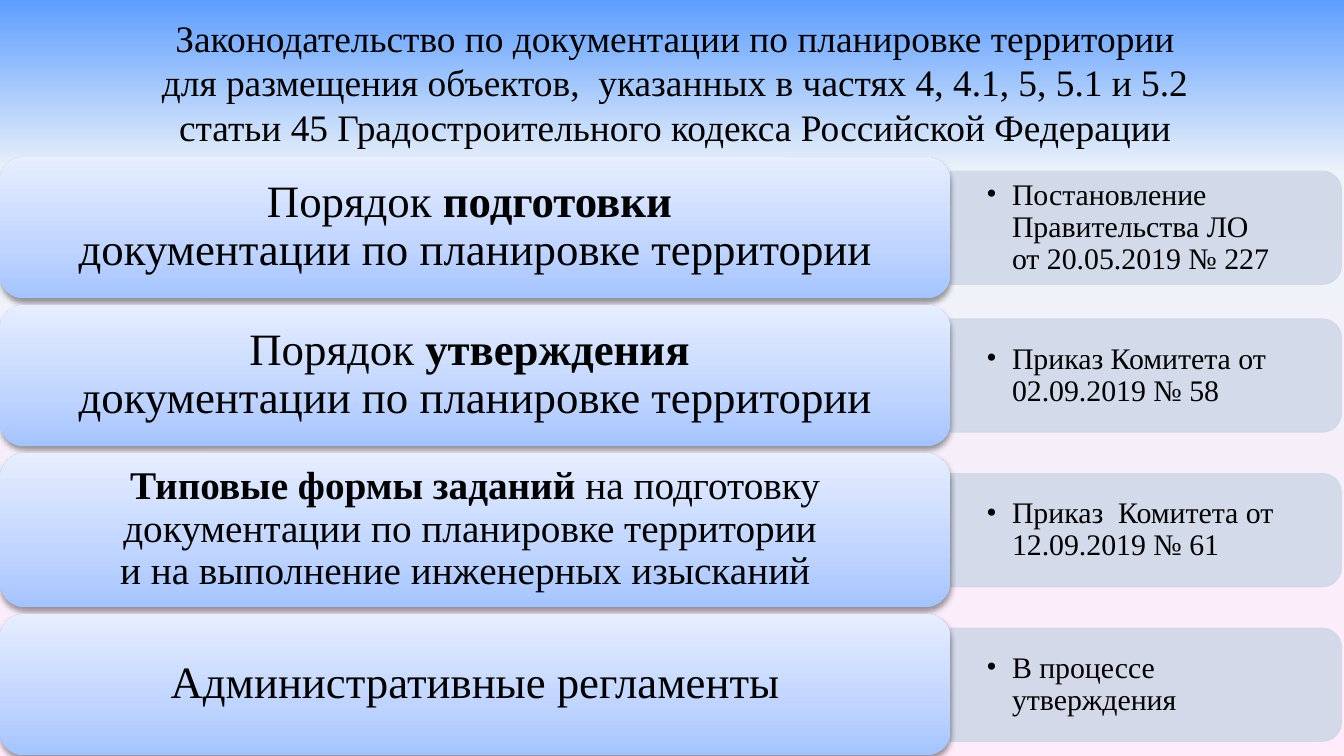
import pptx
import pptx.dml.color
import pptx.enum.shapes
import pptx.enum.text
import pptx.oxml
import pptx.oxml.ns
import pptx.util
from pptx.util import Inches

FONT = "Times New Roman"
SHAPES = pptx.enum.shapes.MSO_SHAPE
ALIGN = pptx.enum.text.PP_ALIGN
ANCHOR = pptx.enum.text.MSO_ANCHOR
NS = pptx.oxml.ns.nsdecls("a")

TITLE = (
    "Законодательство по документации по планировке территории \n"
    "для размещения объектов,  указанных в частях 4, 4.1, 5, 5.1 и 5.2 \n"
    "статьи 45 Градостроительного кодекса Российской Федерации "
)
PLANNING = "документации по планировке территории"
ROWS = [
    (1.05, 24, [("Порядок ", False), ("подготовки \n", True), (PLANNING, False)],
     "Постановление Правительства ЛО\nот 20.05.2019 № 227"),
    (1.05, 24, [("Порядок", False), (" утверждения \n", True), (PLANNING, False)],
     "Приказ Комитета от 02.09.2019 № 58"),
    (1.15, 21, [("Типовые формы заданий ", True),
                (f"на подготовку {PLANNING} \nи на выполнение инженерных изысканий  ", False)],
     "Приказ  Комитета от 12.09.2019 № 61"),
    (1.05, 24, [("Административные регламенты", False)],
     "В процессе утверждения"),
]
ROWS_TOP, ROW_GAP = 1.17, 0.05
TOPIC_WIDTH, ACT_WIDTH, ACT_HEIGHT = 7.07, 2.91, 0.84


def color(value):
    return pptx.dml.color.RGBColor.from_string(value)


def set_alpha(element, percent):
    for rgb in element.iter(pptx.oxml.ns.qn("a:srgbClr")):
        rgb.append(pptx.oxml.parse_xml(f'<a:alpha {NS} val="{percent * 1000}"/>'))


def set_gradient(fill, owner, stops, angle):
    fill.gradient()
    gradient = owner.find(".//" + pptx.oxml.ns.qn("a:gradFill"))
    marks = "".join(
        f'<a:gs pos="{position * 1000}"><a:srgbClr val="{value}">'
        f'<a:alpha val="{alpha * 1000}"/></a:srgbClr></a:gs>'
        for position, value, alpha in stops)
    xml = (f'<a:gradFill {NS} rotWithShape="1"><a:gsLst>{marks}</a:gsLst>'
           f'<a:lin ang="{angle * 60000}" scaled="0"/></a:gradFill>')
    gradient.getparent().replace(gradient, pptx.oxml.parse_xml(xml))


def write_text(frame, spans, size=20, align=ALIGN.CENTER, anchor=ANCHOR.MIDDLE,
               spacing=0.9, wrap=True, margins=(0.1, 0.05), bullet=False):
    frame.word_wrap = wrap
    frame.vertical_anchor = anchor
    frame.margin_left = frame.margin_right = Inches(margins[0])
    frame.margin_top = frame.margin_bottom = Inches(margins[1])
    paragraph = frame.paragraphs[0]
    paragraph.alignment = align
    paragraph.line_spacing = spacing
    for text, bold in spans:
        for index, line in enumerate(text.split("\n")):
            if index:
                paragraph.add_line_break()
            if line:
                run = paragraph.add_run()
                run.text = line
                run.font.name = FONT
                run.font.size = pptx.util.Pt(size)
                run.font.bold = bold
                run.font.color.rgb = color("000000")
    if bullet:
        paragraph.level = 1
        properties = paragraph._p.get_or_add_pPr()
        properties.set("marL", str(Inches(0.19)))
        properties.set("indent", str(-Inches(0.19)))
        properties.append(pptx.oxml.parse_xml(f'<a:buFont {NS} typeface="{FONT}"/>'))
        properties.append(pptx.oxml.parse_xml(f'<a:buChar {NS} char="•"/>'))


def add_title(slide, left, top, width, height):
    title = slide.shapes.add_textbox(Inches(left), Inches(top), Inches(width), Inches(height))
    write_text(title.text_frame, [(TITLE, False)], anchor=ANCHOR.TOP, spacing=1.0, wrap=False)


def add_act(slide, left, top, width, height, text):
    plate = slide.shapes.add_shape(
        SHAPES.ROUND_2_SAME_RECTANGLE,
        Inches(left + (width - height) / 2), Inches(top + (height - width) / 2),
        Inches(height), Inches(width))
    plate.rotation = 90
    plate.shadow.inherit = False
    plate.fill.solid()
    plate.fill.fore_color.rgb = color("D0D8E8")
    plate.line.color.rgb = color("D0D8E8")
    plate.line.width = pptx.util.Pt(0.75)
    set_alpha(plate._element.spPr, 90)
    act = slide.shapes.add_textbox(
        Inches(left), Inches(top + 0.04), Inches(width - 0.04), Inches(height - 0.08))
    write_text(act.text_frame, [(text, False)], size=16, align=ALIGN.LEFT,
               margins=(0.27, 0.14), bullet=True)


def add_topic(slide, left, top, width, height, spans, size):
    plate = slide.shapes.add_shape(
        SHAPES.ROUNDED_RECTANGLE, Inches(left), Inches(top), Inches(width), Inches(height))
    set_gradient(plate.fill, plate._element.spPr,
                 [(0, "A4C4FF", 100), (35, "BFD4FF", 100), (100, "E6EEFF", 100)], 270)
    plate.line.fill.background()
    plate.shadow.inherit = False
    effects = plate._element.spPr.find(pptx.oxml.ns.qn("a:effectLst"))
    effects.append(pptx.oxml.parse_xml(
        f'<a:outerShdw {NS} blurRad="{pptx.util.Pt(3.1)}" dist="{pptx.util.Pt(1.6)}" '
        'dir="5400000" rotWithShape="0"><a:srgbClr val="000000">'
        '<a:alpha val="38000"/></a:srgbClr></a:outerShdw>'))
    topic = slide.shapes.add_textbox(
        Inches(left + 0.05), Inches(top + 0.05), Inches(width - 0.1), Inches(height - 0.11))
    write_text(topic.text_frame, spans, size=size)


def add_row(slide, left, top, height, size, spans, act):
    add_act(slide, left + TOPIC_WIDTH, top + (height - ACT_HEIGHT) / 2,
            ACT_WIDTH, ACT_HEIGHT, act)
    add_topic(slide, left, top, TOPIC_WIDTH, height, spans, size)


def main():
    deck = pptx.Presentation()
    deck.slide_width = Inches(10)
    deck.slide_height = deck.slide_width * 9 // 16
    slide = deck.slides.add_slide(deck.slide_layouts[6])
    set_gradient(slide.background.fill, slide._element,
                 [(0, "5E9EFF", 100), (23, "EDF3F9", 34), (100, "FFEBFA", 100)], 90)
    add_title(slide, 1.07, 0.06, 7.98, 1.11)
    top = ROWS_TOP
    for height, size, spans, act in ROWS:
        add_row(slide, 0, top, height, size, spans, act)
        top += height + ROW_GAP
    deck.save("out.pptx")


if __name__ == "__main__":
    main()
